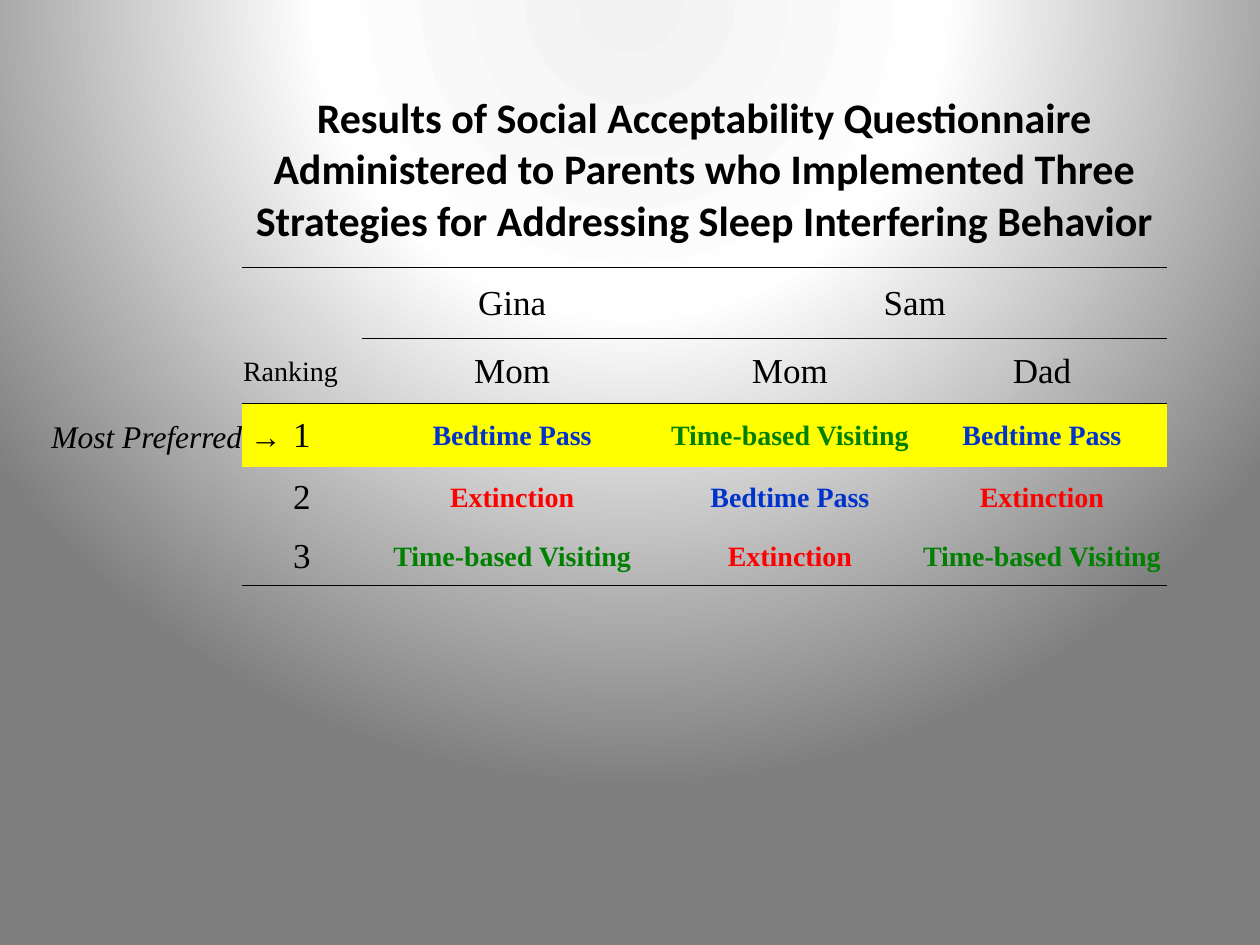
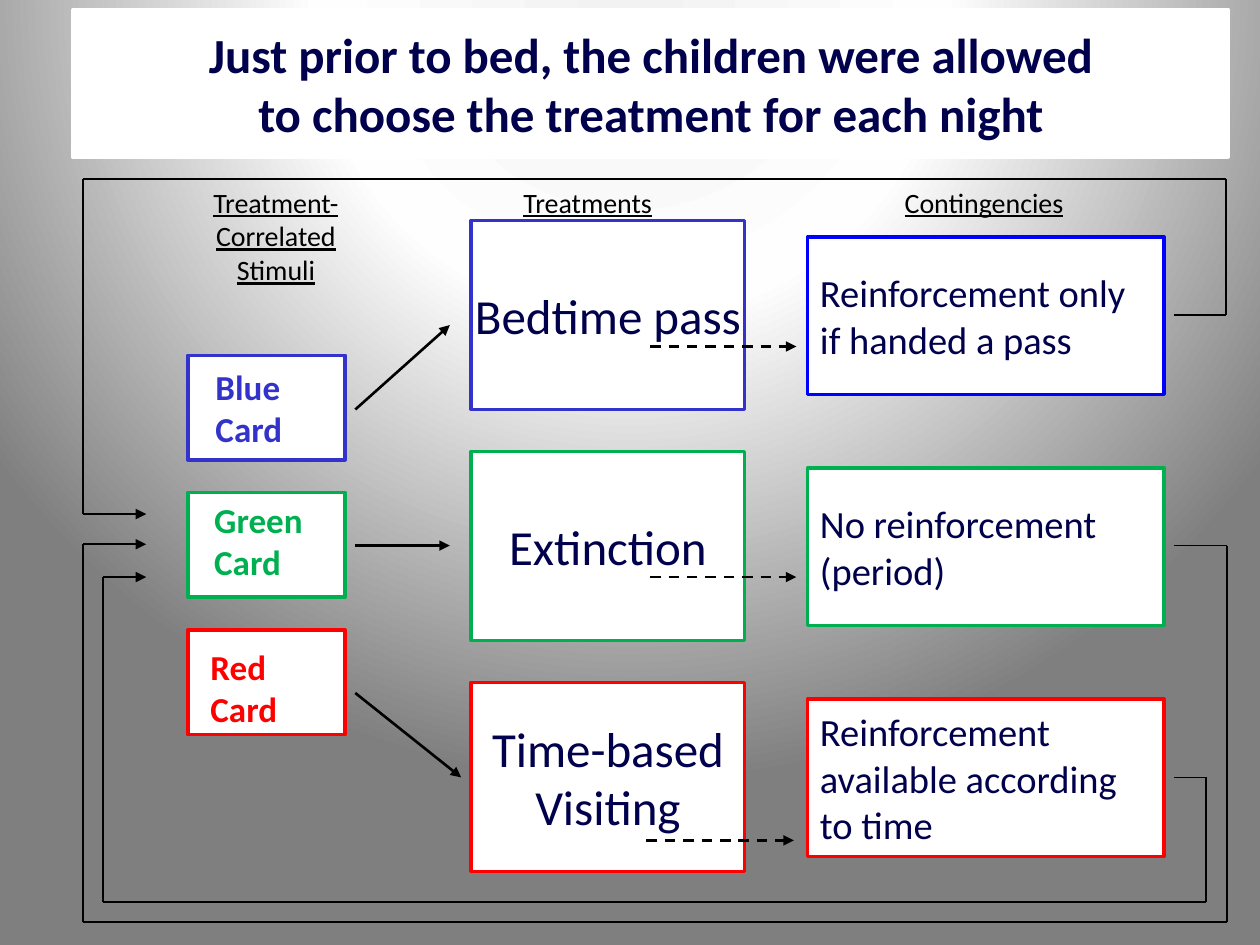
"""Build two slides on parents' and children's choices among sleep treatments."""
import itertools

import lxml.etree
import pptx
import pptx.dml.color
import pptx.enum.dml
import pptx.enum.shapes
import pptx.enum.text
import pptx.oxml
import pptx.oxml.ns
import pptx.util

Inches = pptx.util.Inches
Pt = pptx.util.Pt
ALIGN = pptx.enum.text.PP_ALIGN
ANCHOR = pptx.enum.text.MSO_ANCHOR
qn = pptx.oxml.ns.qn

COLORS = {
    "black": "000000", "white": "FFFFFF", "navy": "00004C",
    "highlight": "FFFF00", "pass": "0033CC", "visiting": "008000",
    "red": "FF0000", "green": "00B050", "indigo": "3333CC", "blue": "0000FF",
}
BACKGROUND_STOPS = [(0, "F2F2F2"), (40, "FEFEFE"), (100, "7F7F7F")]
SANS, SERIF = "Calibri", "Times New Roman"

QUESTIONNAIRE_TITLE = (
    "Results of Social Acceptability Questionnaire\n"
    "Administered to Parents who Implemented Three Strategies "
    "for Addressing Sleep Interfering Behavior"
)
RANKINGS = [
    [QUESTIONNAIRE_TITLE, "", "", ""],
    ["", "Gina", "Sam", ""],
    ["Ranking", "Mom", "Mom", "Dad"],
    ["1", "Bedtime Pass", "Time-based Visiting", "Bedtime Pass"],
    ["2", "Extinction", "Bedtime Pass", "Extinction"],
    ["3", "Time-based Visiting", "Extinction", "Time-based Visiting"],
    ["", "", "", ""],
]
RANKING_WIDTHS = [0.95, 2.39, 2.02, 1.98]
RANKING_HEIGHTS = [1.54, 0.57, 0.51, 0.51, 0.47, 0.47, 0.53]
MERGES = [((0, 0), (0, 3)), ((1, 2), (1, 3)), ((6, 0), (6, 1))]
RULE_START_COLUMN = {1: 0, 2: 1, 3: 0, 6: 0}
TOP_CHOICE_ROW = 3
STRATEGY_COLORS = {
    "Bedtime Pass": "pass", "Time-based Visiting": "visiting", "Extinction": "red",
}

CHOICE_TITLE = (
    "Just prior to bed, the children were allowed\n"
    "to choose the treatment for each night"
)
HEADINGS = [
    ("Treatment-\nCorrelated\nStimuli", 1.58, 1.22, 0.91),
    ("Treatments", 4.05, 1.23, 0.37),
    ("Contingencies", 7.07, 1.48, 0.37),
]
CARDS = [
    ("Blue\nCard", "indigo", 0.22, 0.08),
    ("Green\nCard", "green", 0.21, 0.05),
    ("Red\nCard", "red", 0.18, 0.12),
]
TREATMENTS = [
    ("Bedtime pass", "indigo"), ("Extinction", "green"),
    ("Time-based\nVisiting", "red"),
]
CONTINGENCIES = [
    ("Reinforcement only if handed a pass", "blue"),
    ("No reinforcement (period)", "green"),
    ("Reinforcement available according to time", "red"),
]
CARD_PITCH, TREATMENT_PITCH = 1.09, 5.5 / 3
CARD_ARROWS = [
    ((2.82, 3.25), (3.57, 2.58)),
    ((2.82, 4.33), (3.57, 4.33)),
    ((2.82, 5.5), (3.66, 6.17)),
]
CONTINGENCY_ARROWS = [(5.16, 6.32, 2.75), (5.16, 6.32, 4.58), (5.13, 6.3, 6.67)]
RETURN_LOOPS = [
    {"start": 2.5, "right": 9.73, "rail": 1.42, "left": 0.66, "end": 4.08},
    {"start": 4.33, "right": 9.74, "rail": 7.32, "left": 0.66, "end": 4.32},
    {"start": 6.17, "right": 9.57, "rail": 7.16, "left": 0.82, "end": 4.58},
]


def rgb(name):
    return pptx.dml.color.RGBColor.from_string(COLORS[name])


def write(frame, text, size=20, color="black", font=SANS, bold=False,
          italic=False, underline=False, align=ALIGN.CENTER,
          anchor=ANCHOR.MIDDLE, wrap=True, margins=None):
    frame.word_wrap = wrap
    frame.vertical_anchor = anchor
    if margins:
        (frame.margin_left, frame.margin_top,
         frame.margin_right, frame.margin_bottom) = map(Inches, margins)
    for index, line in enumerate(text.split("\n")):
        paragraph = frame.add_paragraph() if index else frame.paragraphs[0]
        paragraph.alignment = align
        run = paragraph.add_run()
        run.text = line
        run.font.name = font
        run.font.size = Pt(size)
        run.font.bold = bold
        run.font.italic = italic
        run.font.underline = underline
        run.font.color.rgb = rgb(color)


def paint(shape, outline):
    shape.fill.solid()
    shape.fill.fore_color.rgb = rgb("white")
    shape.line.color.rgb = rgb(outline)
    shape.line.width = Pt(2)


def add_label(slide, box, text, **style):
    label = slide.shapes.add_textbox(*map(Inches, box))
    write(label.text_frame, text, wrap=False, anchor=ANCHOR.TOP, **style)


def add_box(slide, box, outline, text, **style):
    panel = slide.shapes.add_shape(
        pptx.enum.shapes.MSO_SHAPE.RECTANGLE, *map(Inches, box))
    panel.shadow.inherit = False
    paint(panel, outline)
    write(panel.text_frame, text, **style)


def add_line(slide, start, end, width=1.5, arrow=True, dashed=False):
    line = slide.shapes.add_connector(
        pptx.enum.shapes.MSO_CONNECTOR.STRAIGHT, *map(Inches, start + end))
    line.line.color.rgb = rgb("black")
    line.line.width = Pt(width)
    if dashed:
        line.line.dash_style = pptx.enum.dml.MSO_LINE.DASH
    properties = line.element.spPr
    if arrow:
        lxml.etree.SubElement(
            properties.find(qn("a:ln")), qn("a:tailEnd"), type="triangle")
    lxml.etree.SubElement(properties, qn("a:effectLst"))


def set_background(master):
    master.background.fill.gradient()
    stops = "".join(
        f'<a:gs pos="{position * 1000}"><a:srgbClr val="{color}"/></a:gs>'
        for position, color in BACKGROUND_STOPS)
    gradient = pptx.oxml.parse_xml(
        f'<a:gradFill {pptx.oxml.ns.nsdecls("a")} rotWithShape="1">'
        f'<a:gsLst>{stops}</a:gsLst><a:path path="circle">'
        '<a:fillToRect l="50000" t="-80000" r="50000" b="180000"/>'
        '</a:path></a:gradFill>')
    current = master.element.find(".//" + qn("a:gradFill"))
    current.getparent().replace(current, gradient)


def set_borders(cell, row, column):
    ruled = {
        "a:lnT": column >= RULE_START_COLUMN.get(row, 4),
        "a:lnB": column >= RULE_START_COLUMN.get(row + 1, 4),
    }
    properties = cell._tc.get_or_add_tcPr()
    for side in ("a:lnL", "a:lnR", "a:lnT", "a:lnB"):
        border = lxml.etree.SubElement(properties, qn(side), w=str(Pt(0.5)))
        if ruled.get(side):
            fill = lxml.etree.SubElement(border, qn("a:solidFill"))
            lxml.etree.SubElement(fill, qn("a:srgbClr"), val=COLORS["black"])
        else:
            lxml.etree.SubElement(border, qn("a:noFill"))


def ranking_style(row, text):
    if row == 0:
        return {"size": 24, "bold": True}
    if text in STRATEGY_COLORS:
        return {"size": 16, "bold": True, "font": SERIF,
                "color": STRATEGY_COLORS[text]}
    if text == "Ranking":
        return {"size": 16, "font": SERIF, "align": ALIGN.LEFT}
    return {"font": SERIF}


def build_questionnaire(deck):
    slide = deck.slides.add_slide(deck.slide_layouts[6])
    rankings = slide.shapes.add_table(
        len(RANKINGS), len(RANKING_WIDTHS), Inches(1.92), Inches(0.58),
        Inches(sum(RANKING_WIDTHS)), Inches(sum(RANKING_HEIGHTS))).table
    rankings.first_row = rankings.horz_banding = False
    for column, width in zip(rankings.columns, RANKING_WIDTHS):
        column.width = Inches(width)
    for row, height in zip(rankings.rows, RANKING_HEIGHTS):
        row.height = Inches(height)
    for first, last in MERGES:
        rankings.cell(*first).merge(rankings.cell(*last))
    for row, entries in enumerate(RANKINGS):
        for column, text in enumerate(entries):
            cell = rankings.cell(row, column)
            set_borders(cell, row, column)
            if row == TOP_CHOICE_ROW:
                cell.fill.solid()
                cell.fill.fore_color.rgb = rgb("highlight")
            else:
                cell.fill.background()
            cell.vertical_anchor = ANCHOR.MIDDLE
            cell.margin_left = cell.margin_top = cell.margin_right = Inches(0.01)
            cell.margin_bottom = 0
            if text:
                write(cell.text_frame, text, anchor=None, wrap=None,
                      **ranking_style(row, text))
    add_label(slide, (0.31, 3.26, 2.06, 0.4), "Most Preferred →",
              size=18, font=SERIF, italic=True, align=ALIGN.LEFT)


def build_choice(deck):
    slide = deck.slides.add_slide(deck.slide_layouts[5])
    title = slide.shapes.title
    title.left, title.top, title.width, title.height = map(
        Inches, (0.58, 0.08, 9.17, 1.17))
    paint(title, "white")
    title.text_frame.auto_size = pptx.enum.text.MSO_AUTO_SIZE.NONE
    write(title.text_frame, CHOICE_TITLE, size=28, color="navy", bold=True,
          wrap=False)

    for index, (text, color, left, top) in enumerate(CARDS):
        add_box(slide, (1.49, 2.82 + index * CARD_PITCH, 1.25, 0.83), color,
                text, color=color, bold=True, align=ALIGN.LEFT,
                anchor=ANCHOR.TOP, margins=(left, top, 0, 0))
    for index, (text, color) in enumerate(TREATMENTS):
        add_box(slide, (3.74, 1.75 + index * TREATMENT_PITCH, 2.17, 1.5), color,
                text, size=28, color="navy", wrap=False)
    for index, (text, color) in enumerate(CONTINGENCIES):
        add_box(slide, (6.41, 1.88 + index * TREATMENT_PITCH, 2.83, 1.25), color,
                text, size=22, color="navy", align=ALIGN.LEFT)
    for text, left, width, height in HEADINGS:
        add_label(slide, (left, 1.42, width, height), text, size=16,
                  underline=True)

    for start, end in CARD_ARROWS:
        add_line(slide, start, end)
    for left, right, y in CONTINGENCY_ARROWS:
        add_line(slide, (left, y), (right, y), dashed=True)
    for loop in RETURN_LOOPS:
        corners = [
            (9.32, loop["start"]), (loop["right"], loop["start"]),
            (loop["right"], loop["rail"]), (loop["left"], loop["rail"]),
            (loop["left"], loop["end"]), (1.16, loop["end"]),
        ]
        for start, end in itertools.pairwise(corners):
            add_line(slide, start, end, width=1, arrow=end == corners[-1])


def main():
    deck = pptx.Presentation()
    deck.slide_width, deck.slide_height = Inches(10), Inches(7.5)
    set_background(deck.slide_master)
    build_questionnaire(deck)
    build_choice(deck)
    deck.save("out.pptx")


if __name__ == "__main__":
    main()
